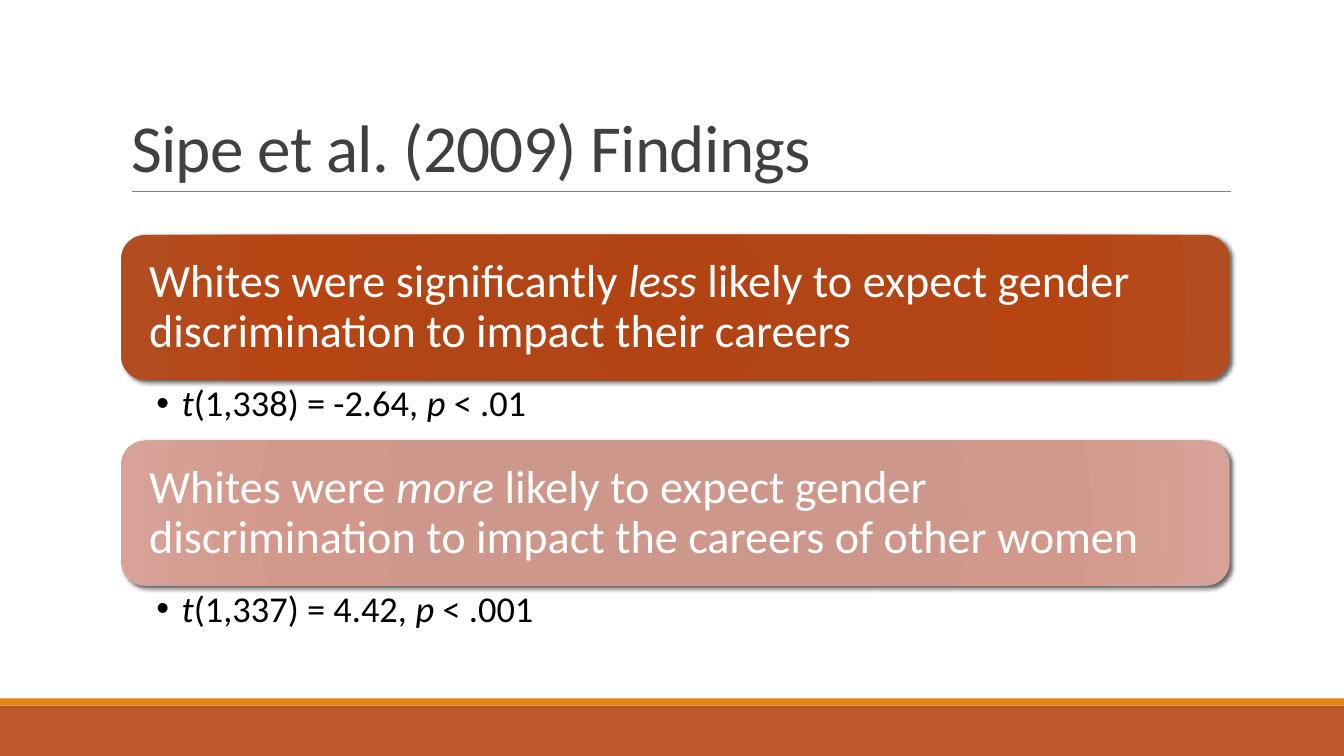
import pptx
import pptx.dml.color
import pptx.enum.shapes
import pptx.enum.text
import pptx.oxml
import pptx.oxml.ns
import pptx.util

Cm, Pt = pptx.util.Cm, pptx.util.Pt
SHAPE = pptx.enum.shapes.MSO_SHAPE
ALIGN = pptx.enum.text.PP_ALIGN
ANCHOR = pptx.enum.text.MSO_ANCHOR
FIT = pptx.enum.text.MSO_AUTO_SIZE
NS = pptx.oxml.ns.nsdecls("a")

HUES = {"band": "BD582C", "strip": "E48312", "rule": "808080",
        "title": "404040", "card": "FFFFFF", "note": "000000"}
FADES = {"dark": ["B24313", "B14516", "B74513", "B24D21"],
         "pale": ["CD9488", "CE978B", "D2988B", "D7A398"]}
STOPS = [0, 34, 70, 100]

# Frame, paragraph and font values for each kind of text
LOOKS = {
    "title": (
        {"vertical_anchor": ANCHOR.BOTTOM},
        {"line_spacing": 0.85},
        {"size": Pt(48)}),
    "card": (
        {"vertical_anchor": ANCHOR.MIDDLE,
         "margin_left": Cm(0.53), "margin_right": Cm(0.53)},
        {"line_spacing": 0.9},
        {"size": Pt(33)}),
    "note": (
        {"vertical_anchor": ANCHOR.TOP,
         "margin_left": Cm(0.89), "margin_right": Cm(0.66)},
        {"line_spacing": 0.9, "level": 1},
        {"size": Pt(26)}),
}

# Asterisks enclose italic words
FINDS = [
    ("dark", "Whites were significantly *less* likely to expect gender "
             "discrimination to impact their careers",
     "*t*(1,338) = -2.64, *p* < .01"),
    ("pale", "Whites were *more* likely to expect gender discrimination "
             "to impact the careers of other women",
     "*t*(1,337) = 4.42, *p* < .001"),
]


def color(key):
    return pptx.dml.color.RGBColor.from_string(HUES[key])


def apply(item, vals):
    for name, val in vals.items():
        setattr(item, name, val)


def place(item, box):
    apply(item, dict(zip(("left", "top", "width", "height"), map(Cm, box))))


def write(shape, text, kind):
    """Fill a shape with one styled paragraph and return it."""
    frame, para, font = LOOKS[kind]
    body = shape.text_frame
    apply(body, {"word_wrap": True, "auto_size": FIT.NONE, **frame})
    line = body.paragraphs[0]
    apply(line, {"alignment": ALIGN.LEFT, "space_before": Pt(0), **para})
    for num, part in enumerate(text.split("*")):
        if part:
            run = line.add_run()
            run.text = part
            apply(run.font, {"name": "Calibri", "italic": num % 2 == 1, **font})
            run.font.color.rgb = color(kind)
    return line


def bar(slide, box, key):
    shape = slide.shapes.add_shape(SHAPE.RECTANGLE, *map(Cm, box))
    shape.shadow.inherit = False
    shape.fill.solid()
    shape.fill.fore_color.rgb = color(key)
    shape.line.fill.background()


def foot(slide, box):
    """Bottom band with a thin strip above it."""
    left, top, width, height = box
    bar(slide, (left, top + 0.18, width, height - 0.18), "band")
    bar(slide, (left, top, width, 0.18), "strip")


def head(slide, box, text):
    """Title with a rule under it."""
    left, top, width, height = box
    title = slide.shapes.title
    place(title, box)
    line = write(title, text, "title")
    line.runs[0].font._element.set("spc", "-50")
    base = Cm(top + height)
    rule = slide.shapes.add_connector(
        pptx.enum.shapes.MSO_CONNECTOR.STRAIGHT,
        Cm(left + 0.28), base, Cm(left + width + 0.02), base)
    rule.line.color.rgb = color("rule")
    rule.line.width = Pt(0.5)
    rule._element.spPr.append(pptx.oxml.parse_xml(f"<a:effectLst {NS}/>"))


def card(slide, box, fade, text):
    """Rounded card with a radial gradient and a soft shadow."""
    shape = slide.shapes.add_shape(SHAPE.ROUNDED_RECTANGLE, *map(Cm, box))
    shape.line.fill.background()
    shape.fill.background()
    shape.shadow.inherit = False
    props = shape._element.spPr
    stops = "".join(
        f'<a:gs pos="{pos * 1000}"><a:srgbClr val="{hue}"/></a:gs>'
        for pos, hue in zip(STOPS, FADES[fade]))
    props.replace(props.find(pptx.oxml.ns.qn("a:noFill")), pptx.oxml.parse_xml(
        f'<a:gradFill {NS} rotWithShape="1"><a:gsLst>{stops}</a:gsLst>'
        '<a:path path="circle"><a:fillToRect l="100000" t="100000" '
        'r="100000" b="100000"/></a:path></a:gradFill>'))
    props.find(pptx.oxml.ns.qn("a:effectLst")).append(pptx.oxml.parse_xml(
        f'<a:outerShdw {NS} blurRad="{Pt(3.5)}" dist="{Pt(2)}" dir="2700000">'
        '<a:srgbClr val="000000"><a:alpha val="60000"/></a:srgbClr>'
        '</a:outerShdw>'))
    write(shape, text, "card")


def note(item, box, text):
    """Bulleted statistic in a body placeholder."""
    place(item, box)
    props = write(item, text, "note")._p.get_or_add_pPr()
    props.set("marL", str(Cm(0.64)))
    props.set("indent", str(-Cm(0.64)))
    props.append(pptx.oxml.parse_xml(f'<a:buChar {NS} char="•"/>'))


def finds(slide, box):
    """Cards, each followed by its statistic, in equal rows."""
    left, top, width, height = box
    row = height / len(FINDS)
    tall = 3.66
    for num, (fade, text, stat) in enumerate(FINDS):
        y = top + num * row
        card(slide, (left, y, width, tall), fade, text)
        note(slide.placeholders[num + 1],
             (left, y + tall, width, row - tall), stat)


def main():
    deck = pptx.Presentation()
    apply(deck, {"slide_width": Cm(33.87), "slide_height": Cm(19.05)})
    # The two-content layout has a body for each statistic
    slide = deck.slides.add_slide(deck.slide_layouts[3])
    foot(slide, (0, 17.6, 33.87, 1.45))
    head(slide, (3.05, 0.79, 27.94, 4.04), "Sipe et al. (2009) Findings")
    finds(slide, (3.05, 5.92, 27.94, 10.36))
    deck.save("out.pptx")


if __name__ == "__main__":
    main()
